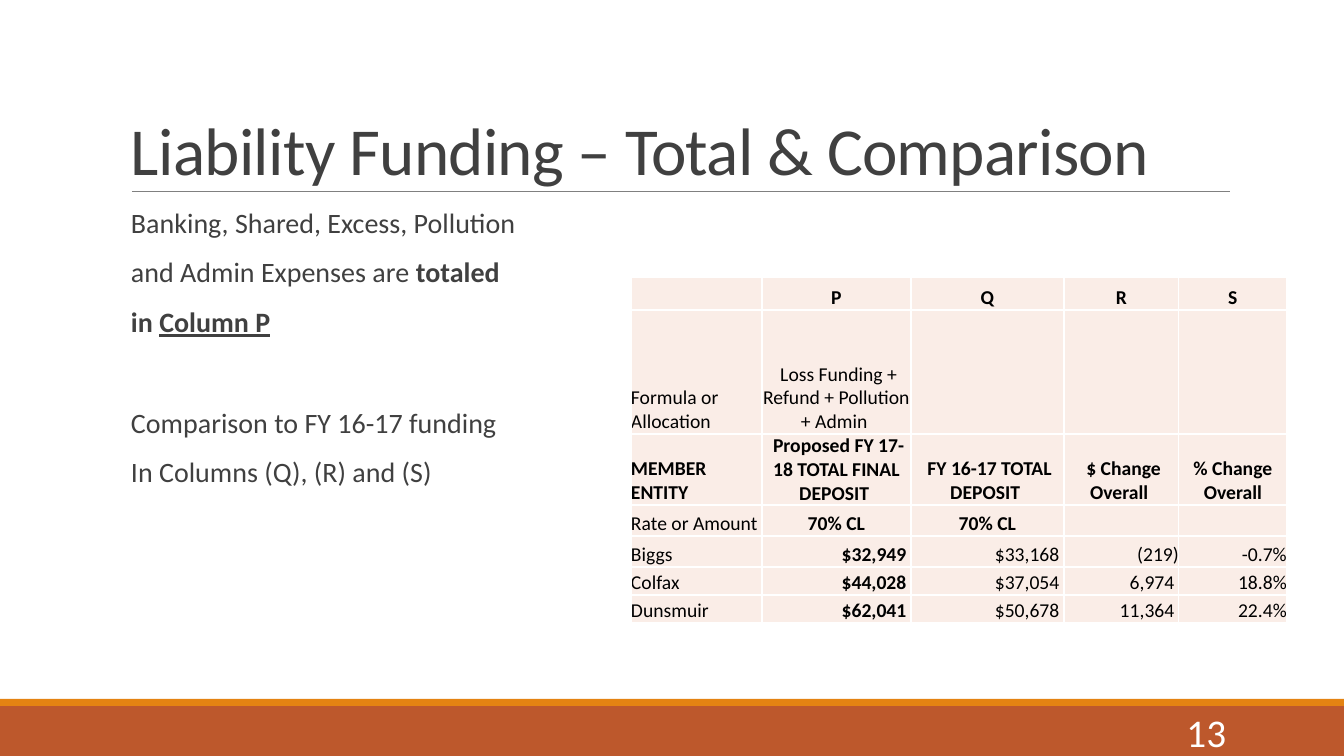
import pptx
import pptx.util
import pptx.dml.color
import pptx.enum.shapes
import pptx.enum.text
import pptx.oxml
import pptx.oxml.ns

# Content
TITLE = "Liability Funding – Total & Comparison"
PAGE = "13"
# Each paragraph: space before in points, then (text, bold, underline) runs
BODY = [
    (12, [("Banking, Shared, Excess, Pollution", False, False)]),
    (12, [("and Admin Expenses are ", False, False), ("totaled", True, False)]),
    (12, [("in ", True, False), ("Column P", True, True)]),
    (48, [("Comparison to FY 16-17 funding", False, False)]),
    (12, [("In Columns (Q), (R) and (S)", False, False)]),
]
DEPOSITS = [
    ["", " P ", " Q ", " R ", " S "],
    ["Formula or Allocation", " Loss Funding + Refund + Pollution + Admin ", "", "", ""],
    ["MEMBER ENTITY", " Proposed FY 17-18 TOTAL FINAL DEPOSIT ",
     " FY 16-17 TOTAL DEPOSIT ", " $ Change Overall ", "% Change Overall"],
    ["Rate or Amount", "70% CL", "70% CL", "", ""],
    ["Biggs", "$32,949 ", "$33,168 ", "(219)", "-0.7%"],
    ["Colfax", "$44,028 ", "$37,054 ", "6,974 ", "18.8%"],
    ["Dunsmuir", "$62,041 ", "$50,678 ", "11,364 ", "22.4%"],
]
COL_WIDTHS = [131, 149, 153, 115, 108]
ROW_HEIGHTS = [33, 124, 71, 31, 31, 28, 28]
FIRST_MEMBER_ROW = 4
BOLD_ROWS = {2}

THEME = {
    "font": "Calibri",
    "text": "404040", "black": "000000", "white": "FFFFFF",
    "footer": "BD582C", "stripe": "E48312", "rule": "808080", "cell": "FAEDE7",
    "title_pt": 48, "body_pt": 20, "table_pt": 14, "page_pt": 28,
}

SLIDE_W, SLIDE_H = 1344, 756
ALIGN = pptx.enum.text.PP_ALIGN
ANCHOR = pptx.enum.text.MSO_ANCHOR


def px(n):
    return pptx.util.Emu(round(n * 914400 / 100.8))


def color(name):
    return pptx.dml.color.RGBColor.from_string(THEME[name])


def style(r, size, fill, bold=False, underline=False):
    r.font.name = THEME["font"]
    r.font.size = pptx.util.Pt(THEME[size])
    r.font.color.rgb = color(fill)
    r.font.bold = bold
    r.font.underline = underline


def add_bar(slide, top, height, fill):
    sp = slide.shapes.add_shape(pptx.enum.shapes.MSO_SHAPE.RECTANGLE,
                                0, px(top), px(SLIDE_W), px(height))
    sp.shadow.inherit = False
    sp.fill.solid()
    sp.fill.fore_color.rgb = color(fill)
    sp.line.fill.background()


def add_text_frame(slide, box, anchor):
    tf = slide.shapes.add_textbox(*map(px, box)).text_frame
    tf.word_wrap = True
    tf.vertical_anchor = anchor
    return tf


def add_borders(cell):
    tc_pr = cell._tc.get_or_add_tcPr()
    for i, side in enumerate(("lnL", "lnR", "lnT", "lnB")):
        tc_pr.insert(i, pptx.oxml.parse_xml(
            f'<a:{side} {pptx.oxml.ns.nsdecls("a")} w="12700"><a:solidFill>'
            f'<a:srgbClr val="{THEME["white"]}"/></a:solidFill></a:{side}>'))


def fill_cell(cell, text, row, col):
    cell.margin_left = cell.margin_right = cell.margin_top = cell.margin_bottom = 0
    cell.vertical_anchor = ANCHOR.BOTTOM
    cell.fill.solid()
    cell.fill.fore_color.rgb = color("cell")
    add_borders(cell)
    if not text:
        return
    is_member = row >= FIRST_MEMBER_ROW
    bold = row in BOLD_ROWS or (col == 1 and row != 1) or (col > 0 and not is_member and row != 1)
    p = cell.text_frame.paragraphs[0]
    p.text = text
    p.alignment = ALIGN.LEFT if col == 0 else ALIGN.RIGHT if is_member else ALIGN.CENTER
    style(p.runs[0], "table_pt", "black", bold)


def main():
    prs = pptx.Presentation()
    prs.slide_width, prs.slide_height = px(SLIDE_W), px(SLIDE_H)
    slide = prs.slides.add_slide(prs.slide_layouts[6])

    # Footer bars and title rule
    add_bar(slide, 706, 50, "footer")
    add_bar(slide, 699, 7, "stripe")
    rule = slide.shapes.add_connector(pptx.enum.shapes.MSO_CONNECTOR.STRAIGHT,
                                      px(132), px(191), px(1230), px(191))
    rule.line.color.rgb = color("rule")
    rule.line.width = pptx.util.Pt(0.5)
    rule._element.spPr.append(pptx.oxml.parse_xml(
        f'<a:effectLst {pptx.oxml.ns.nsdecls("a")}/>'))

    # Title
    p = add_text_frame(slide, (121, 34, 1109, 160), ANCHOR.BOTTOM).paragraphs[0]
    p.text = TITLE
    p.line_spacing = 0.85
    style(p.runs[0], "title_pt", "text")
    p.runs[0].font._element.set("spc", "-50")

    # Body
    tf = add_text_frame(slide, (121, 204, 1109, 444), ANCHOR.TOP)
    tf.margin_left, tf.margin_right = px(10), 0
    for i, (before, runs) in enumerate(BODY):
        p = tf.paragraphs[0] if i == 0 else tf.add_paragraph()
        p.line_spacing = 0.9
        p.space_before, p.space_after = pptx.util.Pt(before), pptx.util.Pt(2)
        for text, bold, underline in runs:
            r = p.add_run()
            r.text = text
            style(r, "body_pt", "text", bold, underline)

    # Deposit table
    table = slide.shapes.add_table(len(ROW_HEIGHTS), len(COL_WIDTHS), px(631), px(277),
                                   px(sum(COL_WIDTHS)), px(sum(ROW_HEIGHTS))).table
    table.first_row = table.horz_banding = False
    for col, width in zip(table.columns, COL_WIDTHS):
        col.width = px(width)
    for row, height in zip(table.rows, ROW_HEIGHTS):
        row.height = px(height)
    for i, values in enumerate(DEPOSITS):
        for j, text in enumerate(values):
            fill_cell(table.cell(i, j), text, i, j)

    # Page number
    p = add_text_frame(slide, (1092, 712, 144, 40), ANCHOR.MIDDLE).paragraphs[0]
    p.text = PAGE
    p.alignment = ALIGN.RIGHT
    style(p.runs[0], "page_pt", "white")

    prs.save("out.pptx")


if __name__ == "__main__":
    main()
